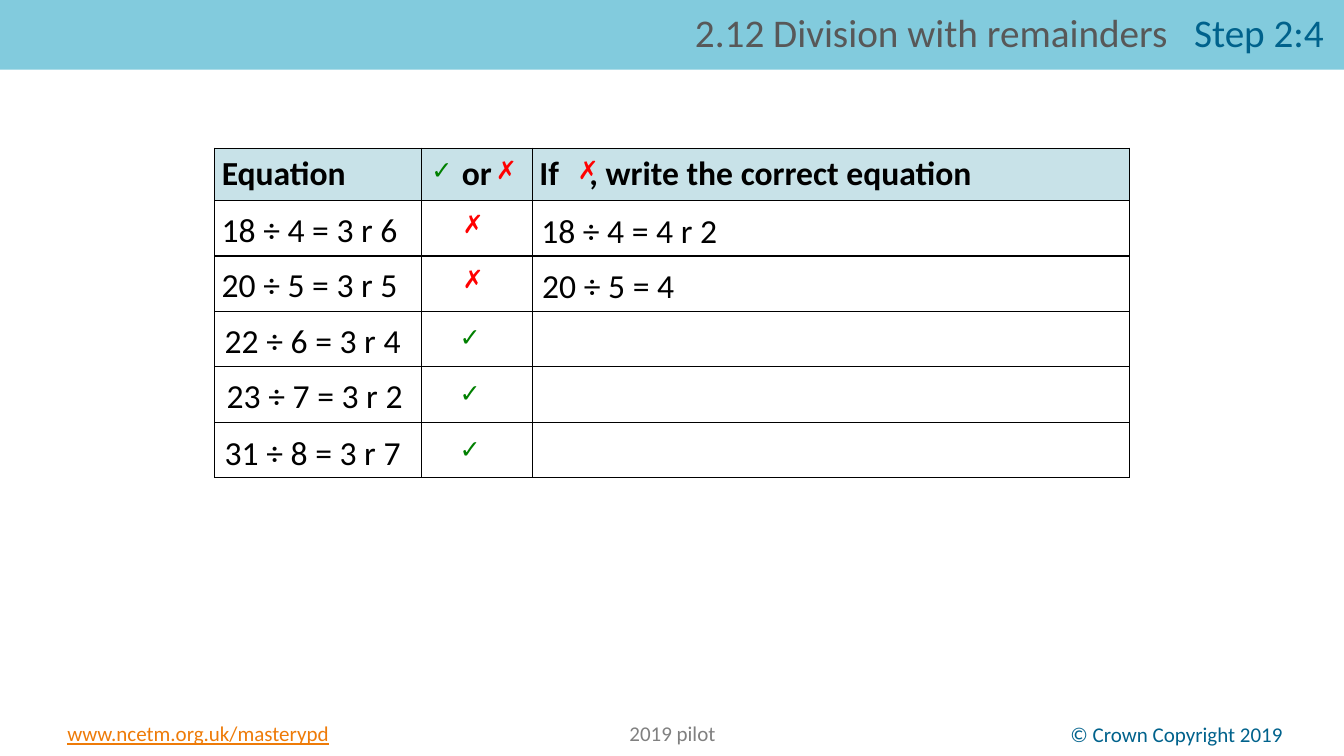
from dataclasses import dataclass
from lxml.etree import SubElement
from pptx import Presentation
from pptx.dml.color import RGBColor
from pptx.enum.text import MSO_ANCHOR, MSO_AUTO_SIZE, PP_ALIGN
from pptx.oxml.ns import qn
from pptx.util import Pt

EMU_PER_PX = 9144
BLACK = RGBColor(0x00, 0x00, 0x00)
GREEN = RGBColor(0x00, 0x80, 0x00)
RED = RGBColor(0xFF, 0x00, 0x00)
BLUE = RGBColor(0x00, 0x62, 0x8C)
ORANGE = RGBColor(0xEE, 0x7B, 0x08)
GREY = RGBColor(0x80, 0x80, 0x80)
DARK_GREY = RGBColor(0x58, 0x58, 0x58)
BAND = RGBColor(0x82, 0xCB, 0xDD)
HEADER = RGBColor(0xC8, 0xE2, 0xE8)

COLUMN_WIDTHS = [205, 110, 592]
ROW_HEIGHTS = [52] + [55] * 5
TABLE_LEFT, TABLE_TOP = 213, 147


@dataclass(frozen=True)
class Style:
    size: int
    color: RGBColor
    bold: bool = False
    underline: bool = False


@dataclass(frozen=True)
class Label:
    text: str
    left: int
    top: int
    width: int
    height: int
    style: Style
    alignment: PP_ALIGN = PP_ALIGN.LEFT
    wrap: bool = False


@dataclass(frozen=True)
class Mark:
    text: str
    width: int
    style: Style


@dataclass(frozen=True)
class Answer:
    equation: str
    left: int
    top: int
    mark: Mark
    mark_left: int
    mark_top: int


TICK = Mark("✓", 40, Style(18, GREEN))
CROSS = Mark("✗", 36, Style(18, RED, bold=True))
EQUATION = Style(24, BLACK)
HEADING = Style(24, BLACK, bold=True)

ANSWERS = [
    Answer("18 ÷ 4 = 3 r 6", 210, 202, CROSS, 449, 202),
    Answer("20 ÷ 5 = 3 r 5", 210, 257, CROSS, 449, 256),
    Answer("22 ÷ 6 = 3 r 4", 213, 312, TICK, 446, 314),
    Answer("23 ÷ 7 = 3 r 2", 215, 367, TICK, 446, 369),
    Answer("31 ÷ 8 = 3 r 7", 213, 424, TICK, 446, 425),
]
CORRECTIONS = [
    Label("18 ÷ 4 = 4 r 2", 527, 203, 219, 50, EQUATION),
    Label("20 ÷ 5 = 4", 528, 258, 170, 50, EQUATION),
]
HEADER_MARKS = [(TICK, 418), (CROSS, 482), (CROSS, 563)]
FOOTERS = [
    Label("© Crown Copyright 2019", 872, 711, 410, 35, Style(15, BLUE),
          PP_ALIGN.RIGHT, True),
    Label("www.ncetm.org.uk/masterypd", 57, 710, 410, 35,
          Style(15, ORANGE, underline=True), wrap=True),
    Label("2019 pilot", 462, 710, 410, 35, Style(15, GREY),
          PP_ALIGN.CENTER, True),
]


def px(value: int) -> int:
    return value * EMU_PER_PX


def apply(target, values: dict) -> None:
    for name, value in values.items():
        setattr(target, name, value)


def add_run(paragraph, text: str, style: Style, spacing: int = 0) -> None:
    run = paragraph.add_run()
    run.text = text
    apply(run.font, {"name": "Calibri", "size": Pt(style.size),
                     "bold": style.bold, "underline": style.underline})
    run.font.color.rgb = style.color
    if spacing:
        run._r.get_or_add_rPr().set("spc", str(spacing))


def add_label(slide, label: Label) -> None:
    box = slide.shapes.add_textbox(
        px(label.left), px(label.top), px(label.width), px(label.height))
    apply(box.text_frame, {"word_wrap": label.wrap,
                           "auto_size": MSO_AUTO_SIZE.SHAPE_TO_FIT_TEXT})
    paragraph = box.text_frame.paragraphs[0]
    paragraph.alignment = label.alignment
    add_run(paragraph, label.text, label.style)


def add_mark(slide, mark: Mark, left: int, top: int) -> None:
    add_label(slide, Label(mark.text, left, top, mark.width, 40, mark.style))


def add_borders(cell) -> None:
    properties = cell._tc.get_or_add_tcPr()
    for position, side in enumerate(("a:lnL", "a:lnR", "a:lnT", "a:lnB")):
        line = properties.makeelement(qn(side), {"w": str(Pt(1))})
        fill = SubElement(line, qn("a:solidFill"))
        SubElement(fill, qn("a:srgbClr"), {"val": str(BLACK)})
        properties.insert(position, line)


def add_title(slide) -> None:
    title = slide.shapes.title
    apply(title, {"left": 0, "top": 0, "width": px(1333), "height": px(69)})
    title.fill.solid()
    title.fill.fore_color.rgb = BAND
    apply(title.text_frame, {
        "margin_left": px(20), "margin_right": px(20),
        "margin_top": px(5), "margin_bottom": px(5), "word_wrap": True,
        "vertical_anchor": MSO_ANCHOR.MIDDLE, "auto_size": MSO_AUTO_SIZE.NONE})
    paragraph = title.text_frame.paragraphs[0]
    apply(paragraph, {"alignment": PP_ALIGN.RIGHT, "line_spacing": 0.9})
    topic = Style(28, DARK_GREY)
    add_run(paragraph, "2.12 Division with remainders", topic)
    add_run(paragraph, " ", topic, spacing=1270)
    add_run(paragraph, "Step 2:4", Style(28, BLUE))


def add_equation_table(slide) -> None:
    table = slide.shapes.add_table(
        len(ROW_HEIGHTS), len(COLUMN_WIDTHS), px(TABLE_LEFT), px(TABLE_TOP),
        px(sum(COLUMN_WIDTHS)), px(sum(ROW_HEIGHTS))).table
    apply(table, {"first_row": False, "horz_banding": False})
    for column, width in zip(table.columns, COLUMN_WIDTHS):
        column.width = px(width)
    for row, height in zip(table.rows, ROW_HEIGHTS):
        row.height = px(height)
    for cell in table.iter_cells():
        apply(cell, {"margin_left": px(7), "margin_right": px(7),
                     "margin_top": 0, "margin_bottom": 0,
                     "vertical_anchor": MSO_ANCHOR.MIDDLE})
        cell.fill.background()
        add_borders(cell)
    headings = [cell.text_frame.paragraphs[0] for cell in table.rows[0].cells]
    for cell in table.rows[0].cells:
        cell.fill.solid()
        cell.fill.fore_color.rgb = HEADER
    add_run(headings[0], "Equation", HEADING)
    headings[1].alignment = PP_ALIGN.CENTER
    add_run(headings[1], "or", HEADING)
    add_run(headings[2], "If", HEADING)
    add_run(headings[2], " ", HEADING, spacing=1630)
    add_run(headings[2], ", write the correct equation", HEADING)


def main() -> None:
    presentation = Presentation()
    apply(presentation, {"slide_width": px(1333), "slide_height": px(750)})
    slide = presentation.slides.add_slide(presentation.slide_layouts[5])
    add_title(slide)
    add_equation_table(slide)
    for label in FOOTERS + CORRECTIONS:
        add_label(slide, label)
    for mark, left in HEADER_MARKS:
        add_mark(slide, mark, left, 148)
    for answer in ANSWERS:
        add_mark(slide, answer.mark, answer.mark_left, answer.mark_top)
        add_label(slide, Label(answer.equation, answer.left, answer.top,
                               219, 50, EQUATION))
    presentation.save("out.pptx")


if __name__ == "__main__":
    main()
